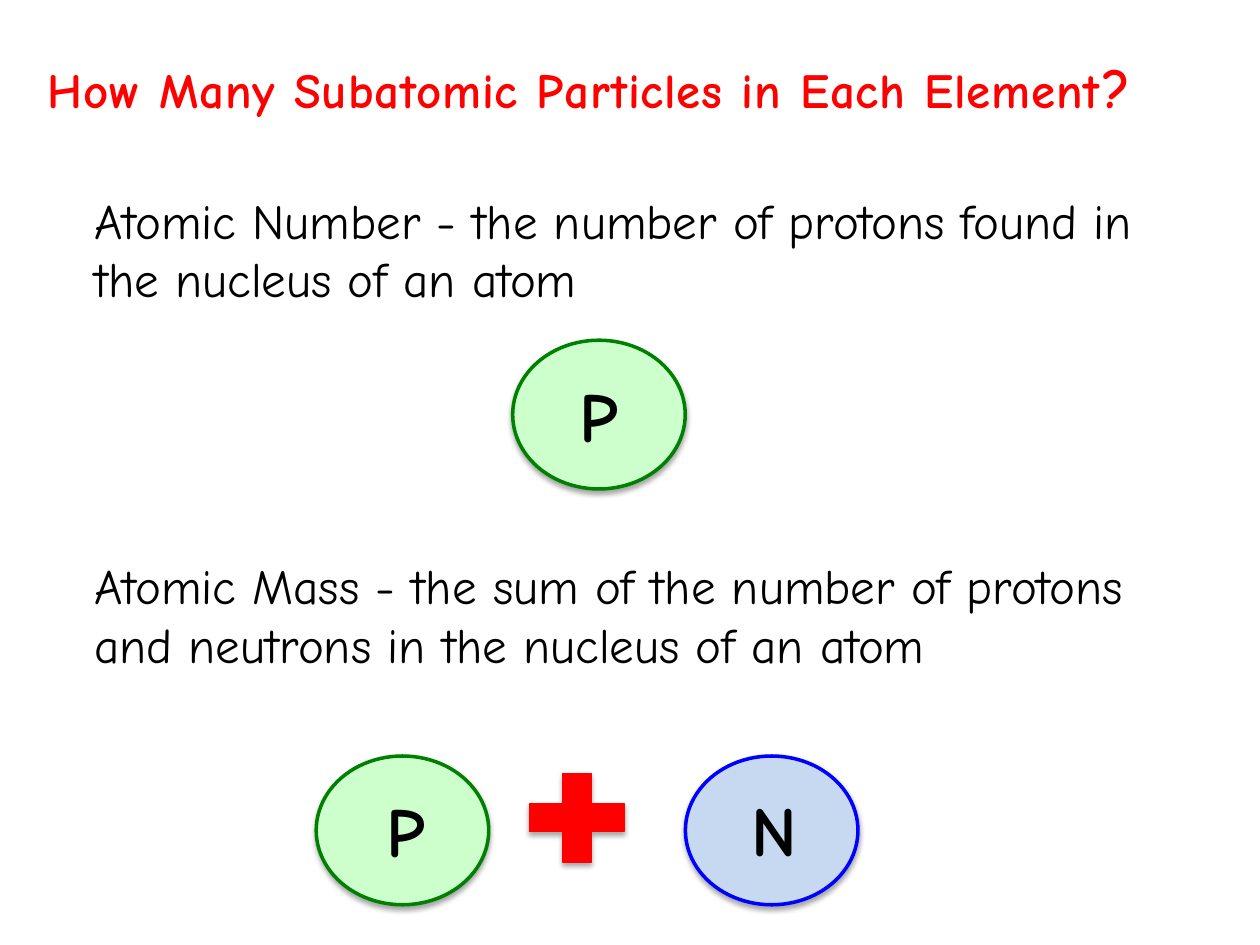
from lxml.etree import SubElement
from pptx import Presentation
from pptx.dml.color import RGBColor
from pptx.enum.shapes import MSO_SHAPE as Shape
from pptx.enum.text import MSO_ANCHOR as Anchor, MSO_AUTO_SIZE as AutoSize, PP_ALIGN as Align
from pptx.oxml.ns import qn
from pptx.util import Pt

RED, BLACK = "FF0000", "000000"
PROTON = ("P", "CCFFCC", "008000")
NEUTRON = ("N", "C6D9F1", "0000FF")


def color(value):
    return RGBColor.from_string(value)


class ParticleSlide:
    font = "Comic Neue"
    body_size, letter_size = 28, 40
    particle_width, particle_height = 98.6, 85
    letter_width, letter_height = 48.2, 55.4

    def __init__(self, presentation):
        self.slide = presentation.slides.add_slide(presentation.slide_layouts[5])
        self.shapes = self.slide.shapes

    def format_run(self, run, size, value=BLACK, bold=False):
        run.font.name = self.font
        run.font.size = Pt(size)
        run.font.bold = bold
        run.font.color.rgb = color(value)

    def title(self, parts, left, top, width, height):
        title = self.shapes.title
        title.left, title.top, title.width, title.height = map(Pt, (left, top, width, height))
        frame = title.text_frame
        frame.auto_size = AutoSize.NONE
        frame.vertical_anchor = Anchor.TOP
        paragraph = frame.paragraphs[0]
        paragraph.alignment = Align.LEFT
        for text, size in parts:
            run = paragraph.add_run()
            run.text = text
            self.format_run(run, size, RED, bold=True)
            run.font._element.set("spc", "50")

    def text(self, text, left, top, width, height, size=body_size,
             bold=False, align=Align.LEFT, shapes=None):
        box = (shapes or self.shapes).add_textbox(*map(Pt, (left, top, width, height)))
        frame = box.text_frame
        frame.word_wrap = True
        frame.text = text
        paragraph = frame.paragraphs[0]
        paragraph.alignment = align
        self.format_run(paragraph.runs[0], size, bold=bold)

    def shape(self, kind, left, top, width, height, fill, line, line_width, shapes=None):
        shape = (shapes or self.shapes).add_shape(kind, *map(Pt, (left, top, width, height)))
        shape.fill.solid()
        shape.fill.fore_color.rgb = color(fill)
        shape.line.color.rgb = color(line)
        shape.line.width = Pt(line_width)
        self.soft_shadow(shape)

    def soft_shadow(self, shape):
        shape.shadow.inherit = False
        effects = shape._element.spPr.find(qn("a:effectLst"))
        shadow = SubElement(effects, qn("a:outerShdw"), blurRad=str(Pt(3.1)),
                            dist=str(Pt(1.8)), dir="5400000", rotWithShape="0")
        shade = SubElement(shadow, qn("a:srgbClr"), val=BLACK)
        SubElement(shade, qn("a:alpha"), val="35000")

    def particle(self, kind, left, top, letter_x, letter_y):
        letter, fill, line = kind
        group = self.shapes.add_group_shape().shapes
        self.shape(Shape.OVAL, left, top, self.particle_width, self.particle_height,
                   fill, line, 2, group)
        self.text(letter, left + letter_x, top + letter_y, self.letter_width,
                  self.letter_height, self.letter_size, True, Align.CENTER, group)


def main():
    presentation = Presentation()
    presentation.slide_width, presentation.slide_height = Pt(720), Pt(540)
    page = ParticleSlide(presentation)

    # Title
    page.title([("How Many Subatomic Particles in Each Element", 28), ("?", 32)],
               20.2, 26.6, 720, 46)

    # Atomic number: protons only
    page.text("Atomic Number - the number of protons found in the nucleus of an atom",
              46.8, 105.1, 625, 75)
    page.particle(PROTON, 293, 194.4, 25.2, 15.1)

    # Atomic mass: protons plus neutrons
    page.text("Atomic Mass - the sum of the number of protons and neutrons "
              "in the nucleus of an atom", 46.8, 313.9, 625, 97.2)
    page.particle(NEUTRON, 391.7, 432, 26.6, 13.7)
    page.particle(PROTON, 180.7, 432, 27.4, 14.4)
    page.shape(Shape.MATH_PLUS, 293, 432.7, 73.4, 69.1, RED, RED, 0.75)

    presentation.save("out.pptx")


if __name__ == "__main__":
    main()
